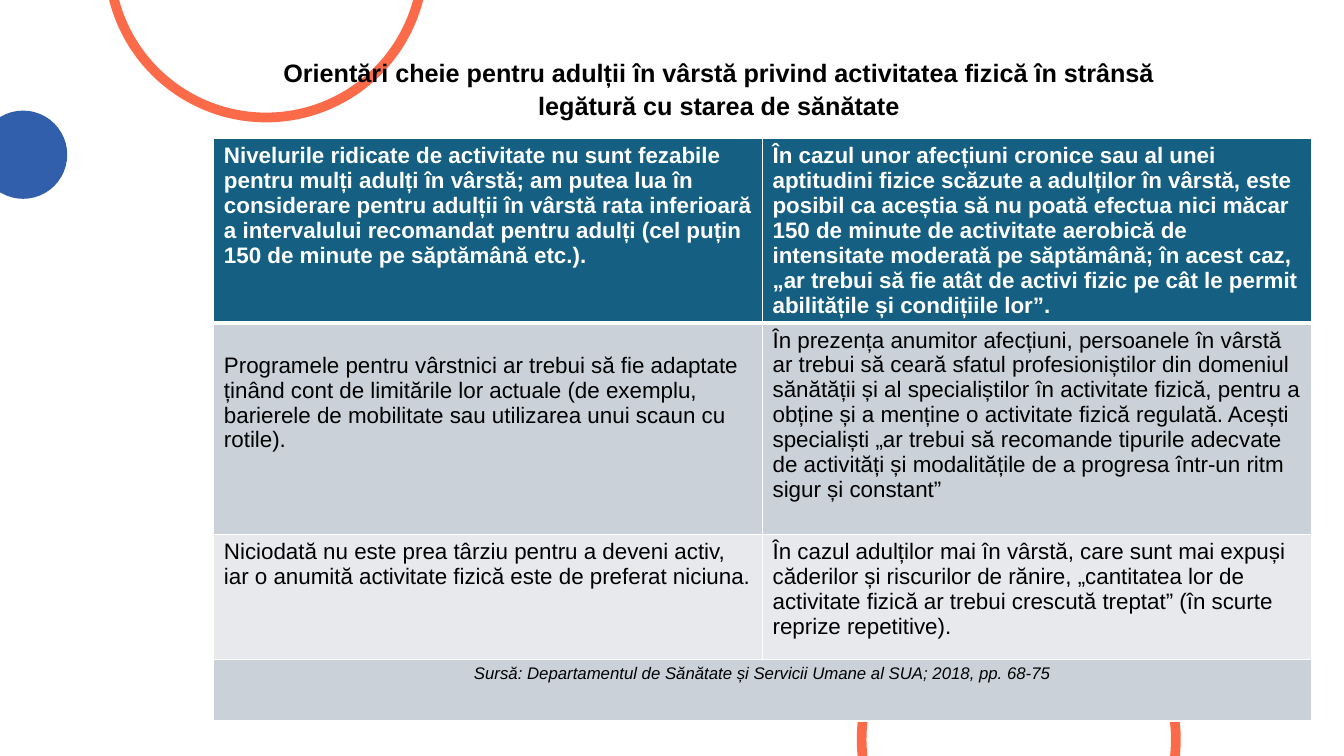
from dataclasses import dataclass

from lxml.etree import SubElement
from pptx import Presentation
from pptx.dml.color import RGBColor
from pptx.enum.shapes import MSO_SHAPE
from pptx.enum.text import MSO_ANCHOR, MSO_AUTO_SIZE, PP_ALIGN
from pptx.oxml.ns import qn
from pptx.util import Pt


@dataclass(frozen=True)
class Theme:
    font: str = "Arial"
    white: str = "FFFFFF"
    black: str = "000000"
    coral: str = "FB6B49"
    blue: str = "315FAB"
    header: str = "156082"
    band_dark: str = "CAD1D8"
    band_light: str = "E7E9EC"
    title_size: int = 18
    body_size: int = 16
    source_size: int = 12


TITLE = (
    "Orientări cheie pentru adulții în vârstă privind activitatea fizică în strânsă "
    "legătură cu starea de sănătate"
)
GUIDELINES = [
    (
        "Nivelurile ridicate de activitate nu sunt fezabile pentru mulți adulți în vârstă; "
        "am putea lua în considerare pentru adulții în vârstă rata inferioară a intervalului "
        "recomandat pentru adulți (cel puțin 150 de minute pe săptămână etc.).",
        "În cazul unor afecțiuni cronice sau al unei aptitudini fizice scăzute a adulților în "
        "vârstă, este posibil ca aceștia să nu poată efectua nici măcar 150 de minute de "
        "activitate aerobică de intensitate moderată pe săptămână; în acest caz, „ar trebui să "
        "fie atât de activi fizic pe cât le permit abilitățile și condițiile lor”.",
    ),
    (
        "Programele pentru vârstnici ar trebui să fie adaptate ținând cont de limitările lor "
        "actuale (de exemplu, barierele de mobilitate sau utilizarea unui scaun cu rotile).",
        "În prezența anumitor afecțiuni, persoanele în vârstă ar trebui să ceară sfatul "
        "profesioniștilor din domeniul sănătății și al specialiștilor în activitate fizică, "
        "pentru a obține și a menține o activitate fizică regulată. Acești specialiști „ar "
        "trebui să recomande tipurile adecvate de activități și modalitățile de a progresa "
        "într-un ritm sigur și constant”",
    ),
    (
        "Niciodată nu este prea târziu pentru a deveni activ, iar o anumită activitate fizică "
        "este de preferat niciuna.",
        "În cazul adulților mai în vârstă, care sunt mai expuși căderilor și riscurilor de "
        "rănire, „cantitatea lor de activitate fizică ar trebui crescută treptat” (în scurte "
        "reprize repetitive).",
    ),
]
SOURCE = "Sursă: Departamentul de Sănătate și Servicii Umane al SUA; 2018, pp. 68-75"
ROW_HEIGHTS = (131, 151.2, 89.3, 43.9)
COLUMN_WIDTH = 391.9


class SlideBuilder:
    def __init__(self, slide, theme):
        self.slide = slide
        self.theme = theme

    def format_paragraph(self, paragraph, size, color, bold=False, italic=False):
        for run in paragraph.runs:
            run.font.name = self.theme.font
            run.font.size = Pt(size)
            run.font.bold = bold
            run.font.italic = italic
            run.font.color.rgb = RGBColor.from_string(color)

    def circle(self, kind, left, top, diameter, color):
        shape = self.slide.shapes.add_shape(
            kind, Pt(left), Pt(top), Pt(diameter), Pt(diameter)
        )
        shape.shadow.inherit = False
        shape.fill.solid()
        shape.fill.fore_color.rgb = RGBColor.from_string(color)
        shape.line.fill.background()
        return shape

    def ring(self, left, top):
        shape = self.circle(MSO_SHAPE.DONUT, left, top, 231.4, self.theme.coral)
        shape.adjustments[0] = 0.03

    def title(self, text, left, top, width, height):
        title = self.slide.shapes.title
        title.left, title.top, title.width, title.height = map(Pt, (left, top, width, height))
        frame = title.text_frame
        frame.text = text
        frame.word_wrap = True
        frame.auto_size = MSO_AUTO_SIZE.NONE
        frame.vertical_anchor = MSO_ANCHOR.TOP
        paragraph = frame.paragraphs[0]
        paragraph.alignment = PP_ALIGN.CENTER
        paragraph.line_spacing = 1.07
        self.format_paragraph(paragraph, self.theme.title_size, self.theme.black, bold=True)
        title.element.getparent().append(title.element)

    def border(self, cell, widths):
        properties = cell._tc.get_or_add_tcPr()
        for side, width in zip("LRTB", widths):
            line = SubElement(properties, qn(f"a:ln{side}"), w=str(Pt(width)))
            fill = SubElement(line, qn("a:solidFill"))
            SubElement(fill, qn("a:srgbClr"), val=self.theme.white)

    def table(self, left, top):
        theme = self.theme
        table = self.slide.shapes.add_table(
            len(ROW_HEIGHTS), 2, Pt(left), Pt(top), Pt(2 * COLUMN_WIDTH), Pt(sum(ROW_HEIGHTS))
        ).table
        for column in table.columns:
            column.width = Pt(COLUMN_WIDTH)
        for index, height in enumerate(ROW_HEIGHTS):
            table.rows[index].height = Pt(height)
            is_header = index == 0
            fill = theme.header if is_header else (theme.band_light, theme.band_dark)[index % 2]
            if index == len(ROW_HEIGHTS) - 1:
                fill = theme.band_dark
            for cell in table.rows[index].cells:
                self.border(cell, (1, 1, 3 if index == 1 else 1, 3 if is_header else 1))
                cell.fill.solid()
                cell.fill.fore_color.rgb = RGBColor.from_string(fill)
        for row, texts in zip(table.rows, GUIDELINES):
            is_header = texts is GUIDELINES[0]
            for cell, text in zip(row.cells, texts):
                cell.text_frame.text = text
                self.format_paragraph(
                    cell.text_frame.paragraphs[0],
                    theme.body_size,
                    theme.white if is_header else theme.black,
                    bold=is_header,
                )
        table.cell(1, 0).margin_top = Pt(21.6)
        source = table.cell(len(ROW_HEIGHTS) - 1, 0)
        source.merge(table.cell(len(ROW_HEIGHTS) - 1, 1))
        source.text_frame.text = SOURCE
        paragraph = source.text_frame.paragraphs[0]
        paragraph.alignment = PP_ALIGN.CENTER
        self.format_paragraph(paragraph, theme.source_size, theme.black, italic=True)


def main():
    presentation = Presentation()
    presentation.slide_width = Pt(960)
    presentation.slide_height = Pt(540)
    theme = Theme()
    builder = SlideBuilder(presentation.slides.add_slide(presentation.slide_layouts[5]), theme)
    builder.circle(MSO_SHAPE.OVAL, -15, 79, 63, theme.blue)
    builder.ring(612, 412.4)
    builder.ring(74.4, -144)
    builder.table(152.8, 99)
    builder.title(TITLE, 190.6, 36, 645.8, 54)
    presentation.save("out.pptx")


if __name__ == "__main__":
    main()
